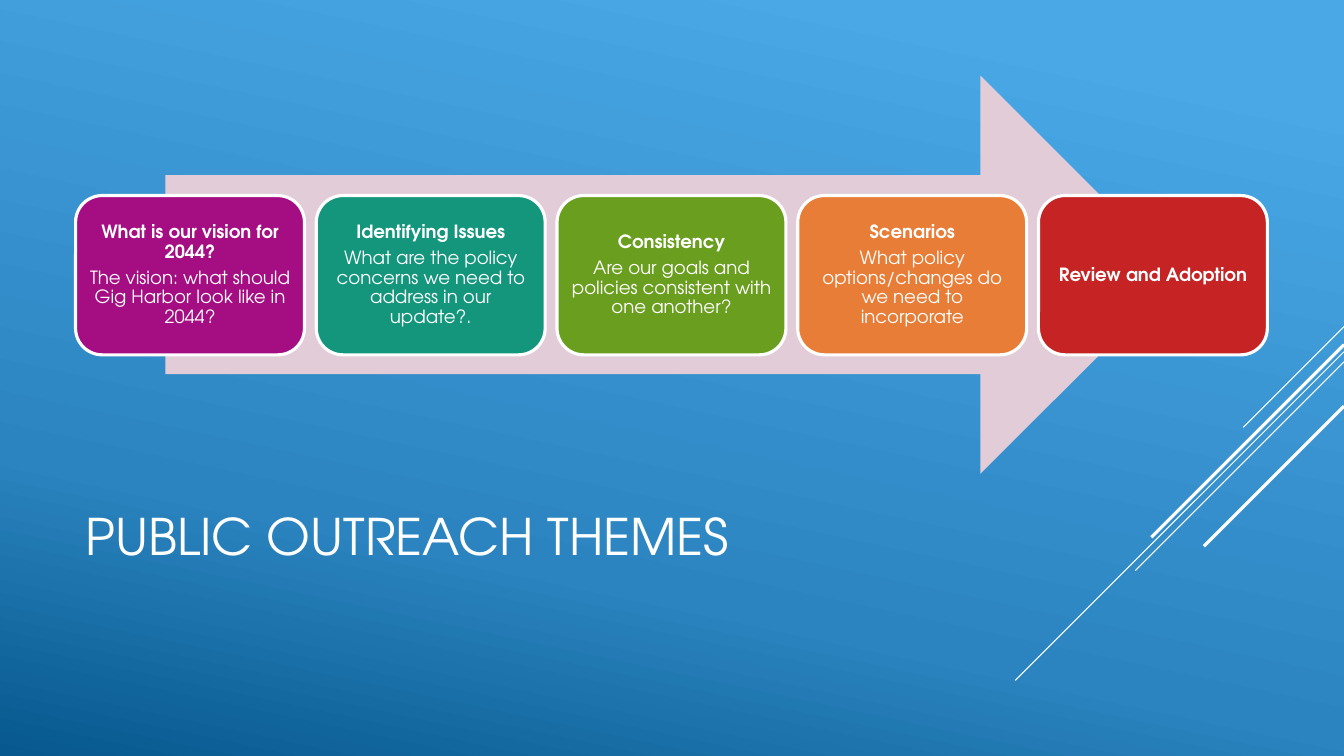
"""Build the public outreach themes slide: five stages along a wide arrow."""
from copy import deepcopy

from lxml.etree import SubElement
from pptx import Presentation
from pptx.dml.color import RGBColor
from pptx.enum.shapes import MSO_CONNECTOR, MSO_SHAPE
from pptx.enum.text import MSO_ANCHOR, PP_ALIGN
from pptx.oxml.ns import qn
from pptx.util import Inches, Pt

FONT = "TeX Gyre Adventor"
COLORS = {
    "white": "FFFFFF", "arrow": "E1CCD8",
    "sky": "4AA8E7", "blue": "2B84BF", "deep": "06588E",
    "purple": "A50E82", "teal": "14967C", "green": "6A9E1F",
    "orange": "E87D37", "red": "C62324",
}


def color(name):
    return RGBColor.from_string(COLORS[name])


def write(paragraph, text, size, bold=False):
    run = paragraph.add_run()
    run.text = text
    for attribute, value in {"name": FONT, "size": Pt(size), "bold": bold}.items():
        setattr(run.font, attribute, value)
    run.font.color.rgb = color("white")


presentation = Presentation()
presentation.slide_width = Inches(13.33)
presentation.slide_height = Inches(7.5)
slide = presentation.slides.add_slide(presentation.slide_layouts[6])
shapes = slide.shapes

background = slide.background.fill
background.gradient()
background.gradient_angle = 360 - 102
first_stop = next(slide.element.iter(qn("a:gs")))
first_stop.addnext(deepcopy(first_stop))
backdrop = [(0.10, "sky"), (0.71, "blue"), (1, "deep")]
for stop, (position, name) in zip(background.gradient_stops, backdrop):
    stop.position = position
    stop.color.rgb = color(name)

diagonals = [
    (3.24, 1, 0.75), (3.49, 3.26, 0.75), (3.59, 2.07, 0.75),
    (3.42, 1.91, 2.25), (4.03, 1.39, 2.25),
]
for top, reach, width in diagonals:
    diagonal = shapes.add_connector(
        MSO_CONNECTOR.STRAIGHT, Inches(13.33), Inches(top),
        Inches(13.33 - reach), Inches(top + reach))
    diagonal.line.color.rgb = color("white")
    diagonal.line.width = Pt(width)
    SubElement(diagonal.element.spPr, qn("a:effectLst"))

title = shapes.add_textbox(Inches(0.75), Inches(4.49), Inches(9.33), Inches(1.65))
title.text_frame.word_wrap = True
title.text_frame.vertical_anchor = MSO_ANCHOR.MIDDLE
write(title.text_frame.paragraphs[0], "PUBLIC OUTREACH THEMES", 36)

arrow = shapes.add_shape(
    MSO_SHAPE.RIGHT_ARROW, Inches(1.64), Inches(0.75), Inches(10.06), Inches(3.95))
arrow.shadow.inherit = False
arrow.fill.solid()
arrow.fill.fore_color.rgb = color("arrow")
arrow.line.fill.background()

stages = [
    ("purple", "What is our vision for 2044?",
     "The vision: what should Gig Harbor look like in 2044?"),
    ("teal", "Identifying Issues",
     "What are the policy concerns we need to address in our update?."),
    ("green", "Consistency",
     "Are our goals and policies consistent with one another?"),
    ("orange", "Scenarios",
     "What policy options/changes do we need to incorporate"),
    ("red", "Review and Adoption", None),
]
first_left, last_left = 0.75, 10.3
pitch = (last_left - first_left) / (len(stages) - 1)
for index, (fill, heading, question) in enumerate(stages):
    card = shapes.add_shape(
        MSO_SHAPE.ROUNDED_RECTANGLE, Inches(first_left + index * pitch),
        Inches(1.94), Inches(2.27), Inches(1.58))
    card.shadow.inherit = False
    card.fill.solid()
    card.fill.fore_color.rgb = color(fill)
    card.line.color.rgb = color("white")
    card.line.width = Pt(2.25)
    frame = card.text_frame
    frame.word_wrap = True
    frame.vertical_anchor = MSO_ANCHOR.MIDDLE
    for side in ("left", "top", "right", "bottom"):
        setattr(frame, f"margin_{side}", Inches(0.05))
    write(frame.paragraphs[0], heading, 13, bold=True)
    if question:
        write(frame.add_paragraph(), question, 13)
    layout = {"alignment": PP_ALIGN.CENTER, "line_spacing": 0.9, "space_after": Pt(4.5)}
    for paragraph in frame.paragraphs:
        for attribute, value in layout.items():
            setattr(paragraph, attribute, value)

presentation.save("out.pptx")
